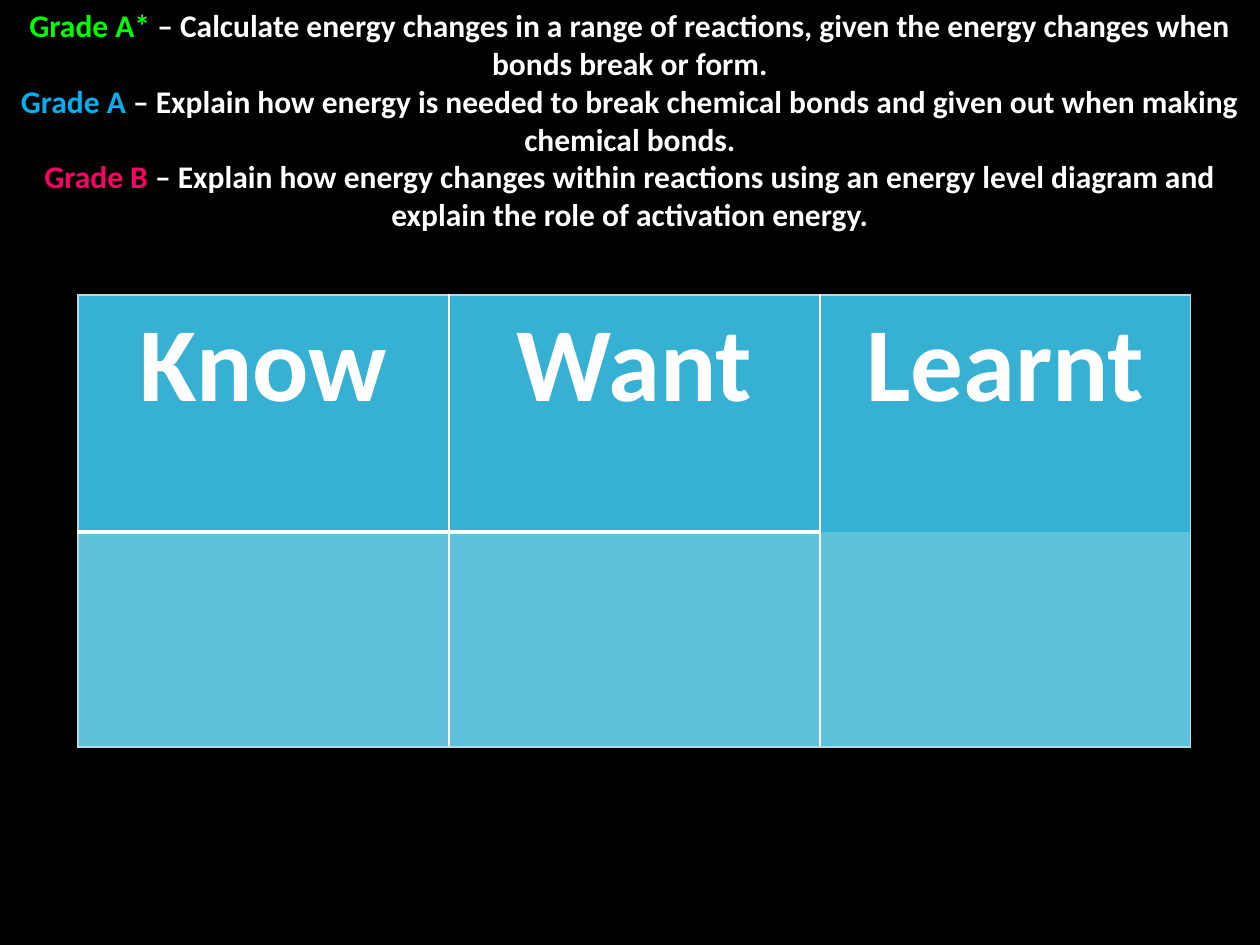
from lxml import etree
from pptx import Presentation
from pptx.dml.color import RGBColor
from pptx.enum.text import PP_ALIGN
from pptx.oxml.ns import qn
from pptx.util import Pt

CENTER = PP_ALIGN.CENTER
FONT = "Calibri"
PX = 914400 / 126
COLORS = {
    "background": "000000",
    "white": "FFFFFF",
    "grade_a_star": "00FF00",
    "grade_a": "00B0F0",
    "grade_b": "FF0066",
    "header": "36B0D3",
    "body": "5EC0DB",
    "outline": "BCD7E1",
}


def px(value):
    return round(value * PX)


def add_run(paragraph, text, size, color):
    paragraph.alignment = CENTER
    run = paragraph.add_run()
    run.text = text
    run.font.name = FONT
    run.font.size = Pt(size)
    run.font.bold = True
    run.font.color.rgb = RGBColor.from_string(COLORS[color])


presentation = Presentation()
presentation.slide_width = px(1260)
presentation.slide_height = px(945)
slide = presentation.slides.add_slide(presentation.slide_layouts[6])
slide.background.fill.solid()
slide.background.fill.fore_color.rgb = RGBColor.from_string(COLORS["background"])

# Learning objectives by grade
objectives = [
    ("Grade A* ", "grade_a_star",
     "– Calculate energy changes in a range of reactions, given the energy "
     "changes when bonds break or form."),
    ("Grade A ", "grade_a",
     "– Explain how energy is needed to break chemical bonds and given out "
     "when making chemical bonds."),
    ("Grade B ", "grade_b",
     "– Explain how energy changes within reactions using an energy level "
     "diagram and explain the role of activation energy."),
]
text_frame = slide.shapes.add_textbox(0, 0, px(1260), px(242)).text_frame
text_frame.word_wrap = True
for index, (grade, color, objective) in enumerate(objectives):
    paragraph = text_frame.add_paragraph() if index else text_frame.paragraphs[0]
    add_run(paragraph, grade, 18, color)
    add_run(paragraph, objective, 18, "white")

# Know / Want / Learnt table
headings = ["Know", "Want", "Learnt"]
row_heights = [237, 215]
table = slide.shapes.add_table(
    2, 3, px(78), px(295), px(1113), px(sum(row_heights))).table
for column in table.columns:
    column.width = px(371)
for row, height in zip(table.rows, row_heights):
    row.height = px(height)
for cell, heading in zip(table.rows[0].cells, headings):
    add_run(cell.text_frame.paragraphs[0], heading, 60, "white")

# Cell borders and fills; the rule under the headings stops before the last column
outline, divider = ("outline", 0.75), ("white", 1)
for row_index, row in enumerate(table.rows):
    for column_index, cell in enumerate(row.cells):
        rule = ("white", 3) if column_index < 2 else None
        borders = {
            "a:lnL": divider if column_index else outline,
            "a:lnR": divider if column_index < 2 else outline,
            "a:lnT": rule if row_index else outline,
            "a:lnB": outline if row_index else rule,
        }
        properties = cell._tc.get_or_add_tcPr()
        for tag, border in borders.items():
            line = etree.SubElement(properties, qn(tag))
            if border is None:
                etree.SubElement(line, qn("a:noFill"))
                continue
            color, width = border
            line.set("w", str(Pt(width)))
            fill = etree.SubElement(line, qn("a:solidFill"))
            etree.SubElement(fill, qn("a:srgbClr"), val=COLORS[color])
        cell.fill.solid()
        cell.fill.fore_color.rgb = RGBColor.from_string(
            COLORS["body" if row_index else "header"])

presentation.save("out.pptx")
